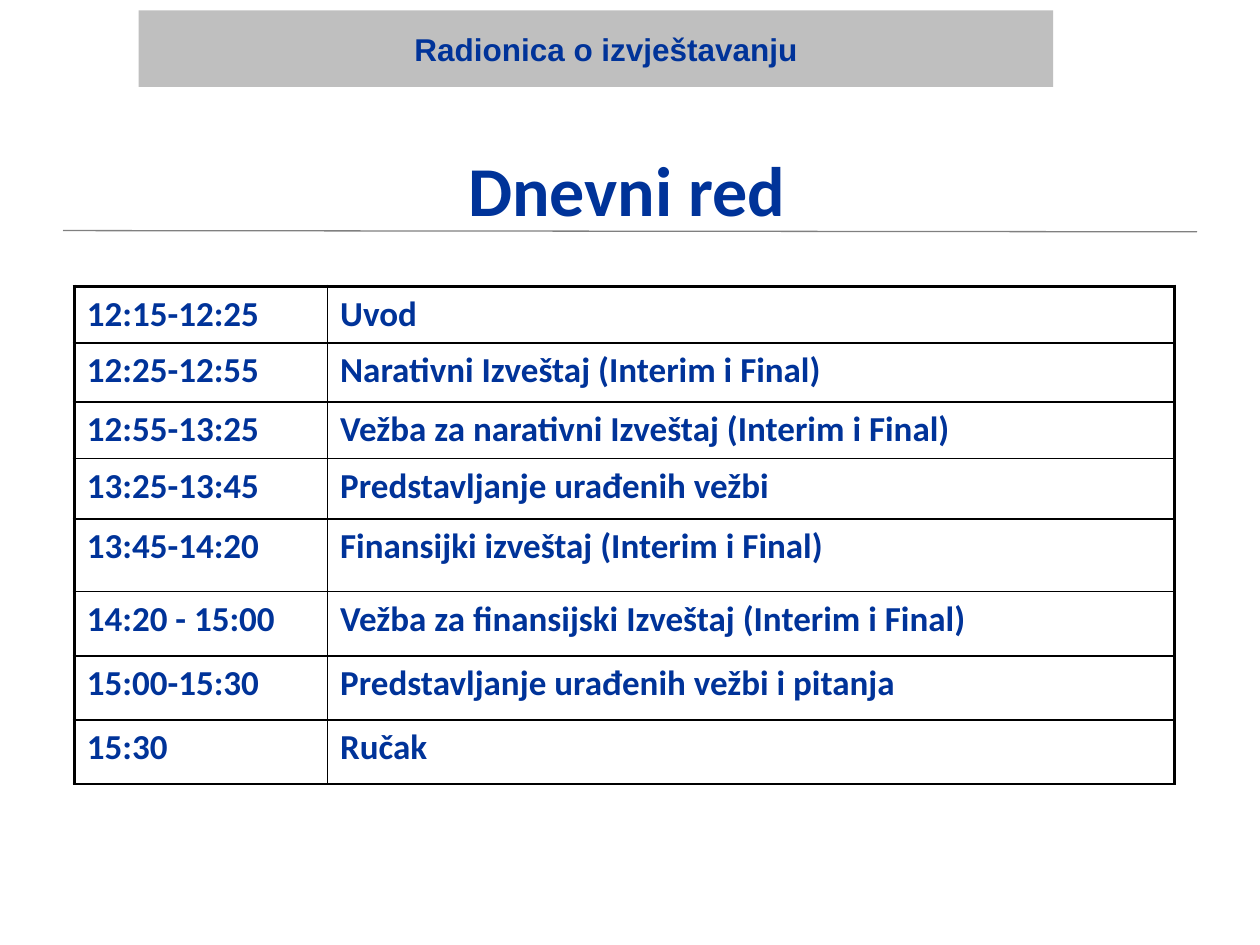
from lxml import etree
from pptx import Presentation
from pptx import util as u
from pptx.dml.color import RGBColor
from pptx.enum import shapes, text
from pptx.oxml.ns import qn

WIDTH, HEIGHT = u.Inches(10), u.Inches(7.5)
COLORS = {"navy": "003399", "band": "BFBFBF", "rule": "808080", "border": "000000"}
THIN, THICK = 1, 2.25
COLUMN_WIDTHS = [2.01, 6.72]
ROW_HEIGHTS = [0.45, 0.47, 0.45, 0.48, 0.58, 0.51, 0.51, 0.51]
AGENDA = [
    ("12:15-12:25", "Uvod"),
    ("12:25-12:55", "Narativni Izveštaj (Interim i Final)"),
    ("12:55-13:25", "Vežba za narativni Izveštaj (Interim i Final)"),
    ("13:25-13:45", "Predstavljanje urađenih vežbi"),
    ("13:45-14:20", "Finansijki izveštaj (Interim i Final)"),
    ("14:20 - 15:00", "Vežba za finansijski Izveštaj (Interim i Final)"),
    ("15:00-15:30", "Predstavljanje urađenih vežbi i pitanja"),
    ("15:30", "Ručak"),
]


def color(name):
    return RGBColor.from_string(COLORS[name])


def share(left, top, width, height):
    """Turn shares of the slide's size into a box of lengths."""
    return [round(part * side) for part, side in
            zip((left, top, width, height), (WIDTH, HEIGHT) * 2)]


def write(frame, words, size=20, font="Calibri", align=None):
    para = frame.paragraphs[0]
    para.alignment = align
    span = para.add_run()
    span.text = words
    span.font.size, span.font.name, span.font.bold = u.Pt(size), font, True
    span.font.color.rgb = color("navy")


def add_banner(page, box, words):
    band = page.shapes.add_shape(shapes.MSO_SHAPE.RECTANGLE, *box)
    band.shadow.inherit = False
    band.fill.solid()
    band.fill.fore_color.rgb = color("band")
    band.line.fill.background()
    left, top, width, height = box
    label = page.shapes.add_textbox(left + round(width * 0.288), top + round(height * 0.18),
                                    round(width * 0.45), round(height * 0.66))
    label.text_frame.word_wrap = False
    write(label.text_frame, words, size=18, font="Arial")


def add_title(page, box, words):
    """Place a title at the bottom of the box, with a rule under it."""
    left, top, width, height = box
    title = page.shapes.add_textbox(*box)
    frame = title.text_frame
    frame.word_wrap = True
    frame.margin_left = frame.margin_top = frame.margin_right = frame.margin_bottom = 0
    frame.vertical_anchor = text.MSO_ANCHOR.BOTTOM
    write(frame, words, size=40, align=text.PP_ALIGN.CENTER)
    margin, base = round(WIDTH * 0.05), top + height
    rule = page.shapes.add_connector(shapes.MSO_CONNECTOR.STRAIGHT,
                                     margin, base, WIDTH - margin, base + u.Inches(0.01))
    rule.line.color.rgb = color("rule")
    rule.line.width = u.Pt(0.75)
    etree.SubElement(rule._element.spPr, qn("a:effectLst"))


def set_borders(cell, **widths):
    properties = cell._tc.get_or_add_tcPr()
    for place, side in enumerate(("L", "R", "T", "B")):
        line = etree.Element(qn(f"a:ln{side}"), w=str(u.Pt(widths[side])))
        fill = etree.SubElement(line, qn("a:solidFill"))
        etree.SubElement(fill, qn("a:srgbClr"), val=COLORS["border"])
        properties.insert(place, line)


def add_agenda(page, box, entries):
    left, top, width, height = box
    table = page.shapes.add_table(len(entries), len(COLUMN_WIDTHS), *box).table
    table.first_row = table.horz_banding = False
    for column, part in zip(table.columns, COLUMN_WIDTHS):
        column.width = round(width * part / sum(COLUMN_WIDTHS))
    for row, part in zip(table.rows, ROW_HEIGHTS):
        row.height = round(height * part / sum(ROW_HEIGHTS))
    last = len(COLUMN_WIDTHS) - 1
    for r, entry in enumerate(entries):
        for c, words in enumerate(entry):
            cell = table.cell(r, c)
            cell.fill.background()
            set_borders(cell, L=THICK if c == 0 else THIN, R=THICK if c == last else THIN,
                        T=THICK if r == 0 else THIN, B=THIN)
            write(cell.text_frame, words)


def main():
    deck = Presentation()
    deck.slide_width, deck.slide_height = WIDTH, HEIGHT
    page = deck.slides.add_slide(deck.slide_layouts[6])
    add_banner(page, share(0.11, 0.011, 0.726, 0.081), "Radionica o izvještavanju")
    add_title(page, share(0.085, 0.064, 0.825, 0.18), "Dnevni red")
    add_agenda(page, share(0.059, 0.303, 0.873, 0.527), AGENDA)
    deck.save("out.pptx")


if __name__ == "__main__":
    main()
